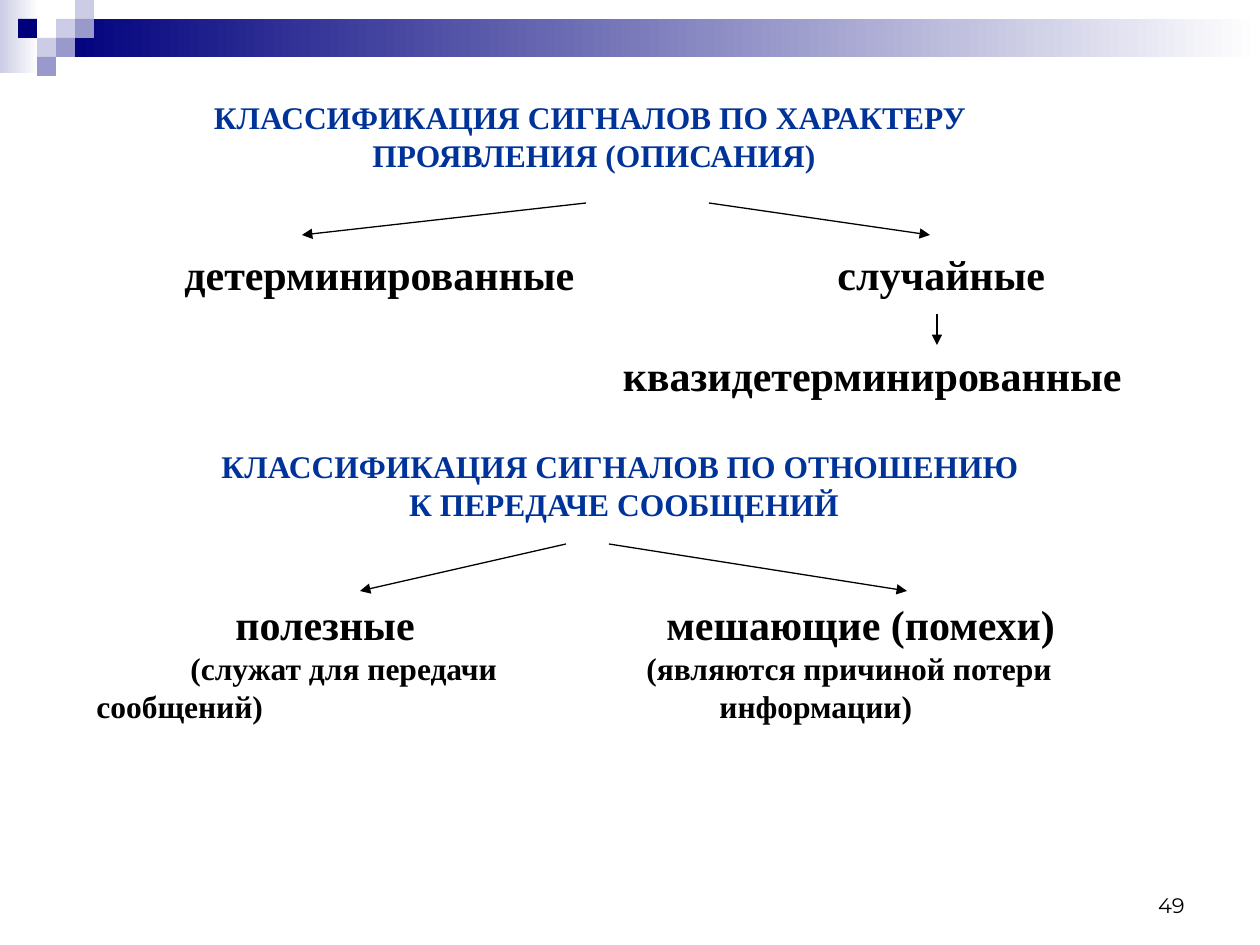
"""Build the slide on the two classifications of signals."""
from lxml import etree
from pptx import Presentation
from pptx.dml.color import RGBColor
from pptx.enum.shapes import MSO_CONNECTOR, MSO_SHAPE
from pptx.enum.text import MSO_ANCHOR, PP_ALIGN
from pptx.oxml.ns import qn
from pptx.util import Emu, Pt

RECTANGLE = MSO_SHAPE.RECTANGLE
STRAIGHT = MSO_CONNECTOR.STRAIGHT
LEFT, CENTER, RIGHT = PP_ALIGN.LEFT, PP_ALIGN.CENTER, PP_ALIGN.RIGHT
BOTTOM = MSO_ANCHOR.BOTTOM
SCALE = 914400 / 126
COLORS = {
    "navy": "00007D",
    "violet": "9999CC",
    "lilac": "CCCCE6",
    "white": "FFFFFF",
    "heading": "003399",
    "black": "000000",
}
LINE_HEIGHT = {12: 15, 18: 21.5, 24: 28.5}


def px(length):
    return Emu(round(length * SCALE))


def rgb(name):
    return RGBColor.from_string(COLORS[name])


prs = Presentation()
prs.slide_width, prs.slide_height = px(1260), px(945)
slide = prs.slides.add_slide(prs.slide_layouts[6])

UNIT = 19
ornament = [
    (0, 0, 39, 73, ["lilac", "white"]),
    (57, UNIT, 1203, 38, ["navy", "white"]),
]
mosaic = [
    (3, 1, "lilac"),
    (4, 0, "lilac"),
    (4, 1, "violet"),
    (2, 2, "lilac"),
    (1, 1, "navy"),
    (3, 2, "violet"),
    (2, 3, "violet"),
]
for column, row, color in mosaic:
    ornament.append((column * UNIT - 1, row * UNIT, UNIT, UNIT, [color]))

for left, top, width, height, colors in ornament:
    tile = slide.shapes.add_shape(RECTANGLE, px(left), px(top), px(width), px(height))
    tile.shadow.inherit = False
    tile.line.fill.background()
    if len(colors) == 1:
        tile.fill.solid()
        tile.fill.fore_color.rgb = rgb(colors[0])
    else:
        tile.fill.gradient()
        tile.fill.gradient_angle = 0
        for stop, color in zip(tile.fill.gradient_stops, colors):
            stop.color.rgb = rgb(color)

SERIF = "Times New Roman"
by_relation = [
    (["КЛАССИФИКАЦИЯ СИГНАЛОВ ПО ОТНОШЕНИЮ ", "К ПЕРЕДАЧЕ СООБЩЕНИЙ"],
     18, "heading", CENTER, 0, []),
    (["\tполезные\tмешающие (помехи)"], 24, "black", LEFT, 44, [139, 570]),
    (["\t(служат для передачи\t(являются причиной потери"],
     18, "black", LEFT, 0, [94, 550]),
    (["сообщений)\tинформации)"], 18, "black", LEFT, 0, [623]),
]
by_character = [
    (["КЛАССИФИКАЦИЯ СИГНАЛОВ ПО ХАРАКТЕРУ ", "ПРОЯВЛЕНИЯ (ОПИСАНИЯ)"],
     18, "heading", CENTER, 0, []),
    (["\tдетерминированные\tслучайные"], 24, "black", LEFT, 43.5, [118, 771]),
    (["квазидетерминированные"], 24, "black", RIGHT, 29, []),
]
slide_number = [(["49"], 12, "black", RIGHT, 0, [])]
texts = [
    (84, 441, 1080, 289, SERIF, by_relation),
    (54, 92, 1080, 314, SERIF, by_character),
    (903, 861, 294, 63, "Montserrat", slide_number),
]
for left, top, width, height, font_name, paragraphs in texts:
    box = slide.shapes.add_textbox(px(left), px(top), px(width), px(height))
    frame = box.text_frame
    frame.word_wrap = True
    if paragraphs is slide_number:
        frame.vertical_anchor = BOTTOM
    for index, (lines, size, color, align, gap, stops) in enumerate(paragraphs):
        paragraph = frame.paragraphs[0] if index == 0 else frame.add_paragraph()
        paragraph.alignment = align
        paragraph.line_spacing = Pt(LINE_HEIGHT[size])
        if gap:
            paragraph.space_before = Pt(gap)
        if stops:
            tabs = etree.SubElement(paragraph._p.get_or_add_pPr(), qn("a:tabLst"))
            for stop in stops:
                etree.SubElement(tabs, qn("a:tab"), pos=str(px(stop)), algn="l")
        for number, line in enumerate(lines):
            if number:
                paragraph.add_line_break()
            run = paragraph.add_run()
            run.text = line
            run.font.name = font_name
            run.font.size = Pt(size)
            run.font.bold = font_name == SERIF
            run.font.color.rgb = rgb(color)

arrows = [
    (586, 203, 302, 235),
    (709, 203, 930, 235),
    (609, 544, 907, 591),
    (566, 544, 360, 591),
    (937, 314, 937, 345),
]
for start_x, start_y, end_x, end_y in arrows:
    arrow = slide.shapes.add_connector(
        STRAIGHT, px(start_x), px(start_y), px(end_x), px(end_y))
    arrow.line.color.rgb = rgb("black")
    arrow.line.width = Pt(0.75)
    etree.SubElement(arrow.line._get_or_add_ln(), qn("a:tailEnd"), type="triangle")
    etree.SubElement(arrow._element.spPr, qn("a:effectLst"))

prs.save("out.pptx")
